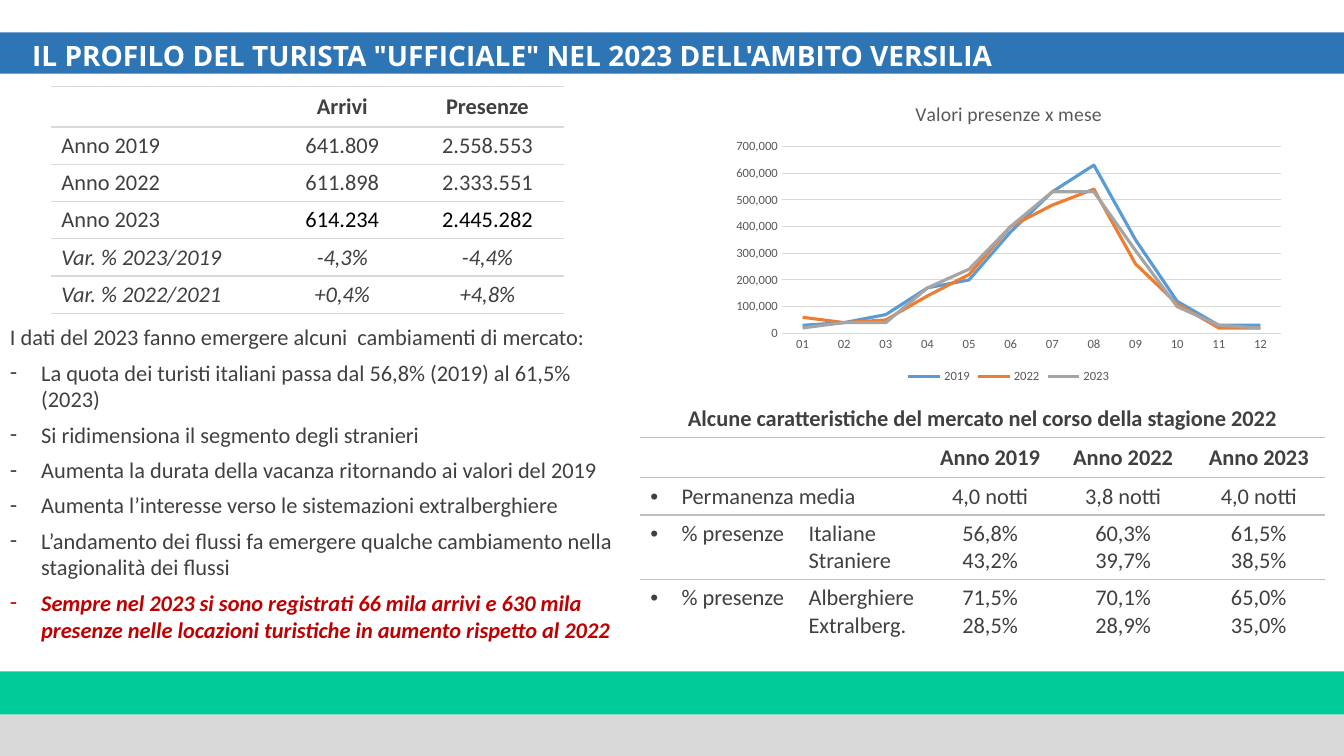
from pptx import Presentation
from pptx.chart.data import CategoryChartData as Data
from pptx.dml.color import RGBColor as Rgb
from pptx.enum.chart import XL_CHART_TYPE as Kind, XL_LEGEND_POSITION as Spot, XL_TICK_MARK as Tick
from pptx.enum.shapes import MSO_SHAPE as Shape
from pptx.enum.text import MSO_ANCHOR as Anchor, PP_ALIGN as Align
from pptx.util import Inches, Pt
from lxml.etree import SubElement as Sub
from pptx.oxml.ns import qn

HUES = {
    "green": "00CC99", "gray": "D9D9D9", "blue": "2E75B6", "white": "FFFFFF",
    "ink": "404040", "black": "000000", "red": "C00000", "rule": "BFBFBF",
    "label": "595959", "2019": "5B9BD5", "2022": "ED7D31", "2023": "A5A5A5",
}


def hue(name):
    return Rgb.from_string(HUES[name])


def style(font, size=16, color="ink", face="Calibri", bold=False, slant=False):
    font.size, font.name = Pt(size), face
    font.bold, font.italic = bold, slant
    font.color.rgb = hue(color)


def write(par, text, align=Align.LEFT, gap=0, mark=None, tab=None, **look):
    par.alignment = align
    par.space_before = par.space_after = Pt(gap)
    props = par._p.get_or_add_pPr()
    if mark:
        props.set("marL", str(Inches(0.31)))
        props.set("indent", str(-Inches(0.31)))
        tint = Sub(props, qn("a:buClr"))
        Sub(tint, qn("a:srgbClr"), val=HUES[look.get("color", "ink")])
        Sub(props, qn("a:buFont"), typeface="Arial")
        Sub(props, qn("a:buChar"), char=mark)
    if tab:
        stops = Sub(props, qn("a:tabLst"))
        Sub(stops, qn("a:tab"), pos=str(Inches(tab)), algn="l")
    run = par.add_run()
    run.text = text
    style(run.font, **look)


def fill(frame, lines):
    for i, (text, look) in enumerate(lines):
        par = frame.add_paragraph() if i else frame.paragraphs[0]
        write(par, text, **look)


class Deck:
    def __init__(self):
        self.show = Presentation()
        self.show.slide_width, self.show.slide_height = Inches(13.33), Inches(7.5)
        self.slide = self.show.slides.add_slide(self.show.slide_layouts[6])
        self.items = self.slide.shapes

    def band(self, top, high, color):
        bar = self.items.add_shape(Shape.RECTANGLE, 0, Inches(top), self.show.slide_width, Inches(high))
        bar.shadow.inherit = False
        bar.fill.solid()
        bar.fill.fore_color.rgb = hue(color)
        bar.line.fill.background()

    def text(self, box, lines, anchor=Anchor.TOP):
        frame = self.items.add_textbox(*map(Inches, box)).text_frame
        frame.word_wrap = True
        frame.vertical_anchor = anchor
        fill(frame, lines)

    def edge(self, cell, side, color):
        line = Sub(cell._tc.get_or_add_tcPr(), qn("a:ln" + side), w=str(Pt(0.96)))
        if color:
            paint = Sub(line, qn("a:solidFill"))
            Sub(paint, qn("a:srgbClr"), val=HUES[color])
        else:
            Sub(line, qn("a:noFill"))

    def table(self, left, top, wides, highs, rows, ruled, color):
        grid = self.items.add_table(
            len(rows), len(wides), Inches(left), Inches(top),
            Inches(sum(wides)), Inches(sum(highs))).table
        grid.first_row = grid.horz_banding = False
        for col, wide in zip(grid.columns, wides):
            col.width = Inches(wide)
        for i, row in enumerate(rows):
            grid.rows[i].height = Inches(highs[i])
            for j, lines in enumerate(row):
                cell = grid.cell(i, j)
                cell.vertical_anchor = Anchor.MIDDLE
                fill(cell.text_frame, lines)
                for side, rule in (("L", False), ("R", False), ("T", i in ruled), ("B", i + 1 in ruled)):
                    self.edge(cell, side, color if rule else None)
                cell.fill.background()
        return grid

    def chart(self, box, title, names, series):
        data = Data(number_format="#,##0")
        data.categories = names
        for name, vals in series.items():
            data.add_series(name, [v * 10000 for v in vals])
        plot = self.items.add_chart(Kind.LINE, *map(Inches, box), data).chart
        style(plot.font, 10, "black", "Arial")
        plot.has_title = True
        write(plot.chart_title.text_frame.paragraphs[0], title, Align.CENTER, size=14, color="label")
        plot.chart_title.include_in_layout = False
        plot.has_legend = True
        plot.legend.position = Spot.BOTTOM
        plot.legend.include_in_layout = False
        style(plot.legend.font, 9, "label")
        for axis in (plot.category_axis, plot.value_axis):
            axis.major_tick_mark = axis.minor_tick_mark = Tick.NONE
            style(axis.tick_labels.font, 9, "label")
        scale = plot.value_axis
        scale.minimum_scale, scale.maximum_scale, scale.major_unit = 0, 700000, 100000
        scale.tick_labels.number_format = "#,##0"
        scale.tick_labels.number_format_is_linked = False
        scale.format.line.fill.background()
        for line in (plot.category_axis.format.line, scale.major_gridlines.format.line):
            line.color.rgb = hue("gray")
            line.width = Pt(0.75)
        plot.plots[0].vary_by_categories = False
        for curve in plot.plots[0].series:
            curve.smooth = False
            curve.format.line.color.rgb = hue(curve.name)
            curve.format.line.width = Pt(2.25)


def mid(*texts, **look):
    return [(text, dict(align=Align.CENTER, **look)) for text in texts]


def split(first, second):
    return [("% presenze\t" + first, dict(mark="•", tab=1.57)), ("\t" + second, {})]


def main():
    deck = Deck()
    for top, high, color in ((6.66, 0.43, "green"), (7.09, 0.41, "gray"), (0.32, 0.41, "blue")):
        deck.band(top, high, color)
    deck.text((0.22, 0.33, 12.39, 0.44), [
        ('IL PROFILO DEL TURISTA "UFFICIALE" NEL 2023 DELL\'AMBITO VERSILIA',
         dict(size=20, face="Open Sans", color="white", bold=True))], Anchor.MIDDLE)

    flows = [
        ("", "Arrivi", "Presenze", dict(bold=True)),
        ("Anno 2019", "641.809", "2.558.553", {}),
        ("Anno 2022", "611.898", "2.333.551", {}),
        ("Anno 2023", "614.234", "2.445.282", dict(color="black")),
        ("Var. % 2023/2019", "-4,3%", "-4,4%", dict(slant=True)),
        ("Var. % 2022/2021", "+0,4%", "+4,8%", dict(slant=True)),
    ]
    rows = [[[(name, {**look, "color": "ink"})], mid(come, **look), mid(stay, **look)]
            for name, come, stay, look in flows]
    deck.table(0.51, 0.86, (2.2, 1.37, 1.51), [0.37] * 6, rows, range(7), "gray")

    head = "Alcune caratteristiche del mercato nel corso della stagione 2022"
    years = ("2019", "2022", "2023")
    rows = [
        [mid(head, bold=True)] + [mid("")] * 3,
        [mid("")] + [mid("Anno " + year, bold=True) for year in years],
        [[("Permanenza media", dict(mark="•"))]] + [mid(t) for t in ("4,0 notti", "3,8 notti", "4,0 notti")],
        [split("Italiane", "Straniere"), mid("56,8%", "43,2%"), mid("60,3%", "39,7%"), mid("61,5%", "38,5%")],
        [split("Alberghiere", "Extralberg."), mid("71,5%", "28,5%"), mid("70,1%", "28,9%"), mid("65,0%", "35,0%")],
    ]
    grid = deck.table(6.35, 3.97, (2.84, 1.26, 1.38, 1.31), [0.37] * 3 + [0.64] * 2, rows, range(1, 5), "rule")
    for j in (1, 2, 3):
        grid.cell(0, j).text_frame.clear()
    grid.cell(0, 0).merge(grid.cell(0, 3))

    points = [
        "La quota dei turisti italiani passa dal 56,8% (2019) al 61,5% (2023)",
        "Si ridimensiona il segmento degli stranieri",
        "Aumenta la durata della vacanza ritornando ai valori del 2019",
        "Aumenta l’interesse verso le sistemazioni extralberghiere",
        "L’andamento dei flussi fa emergere qualche cambiamento nella stagionalità dei flussi",
    ]
    last = ("Sempre nel 2023 si sono registrati 66 mila arrivi e 630 mila presenze "
            "nelle locazioni turistiche in aumento rispetto al 2022")
    deck.text((0, 3.16, 6.35, 3.26), [
        ("I dati del 2023 fanno emergere alcuni  cambiamenti di mercato:", dict(gap=3)),
        *((point, dict(gap=3, mark="-")) for point in points),
        (last, dict(gap=3, mark="-", color="red", bold=True, slant=True))])

    deck.chart((7.19, 0.85, 5.63, 3), "Valori presenze x mese", [f"{m:02}" for m in range(1, 13)], {
        "2019": (3, 4, 7, 17, 20, 38, 53, 63, 35, 12, 3, 3),
        "2022": (6, 4, 5, 14, 22, 40, 48, 54, 26, 11, 2, 2),
        "2023": (2, 4, 4, 17, 24, 40, 53, 53, 31, 10, 3, 2),
    })
    deck.show.save("out.pptx")


if __name__ == "__main__":
    main()
